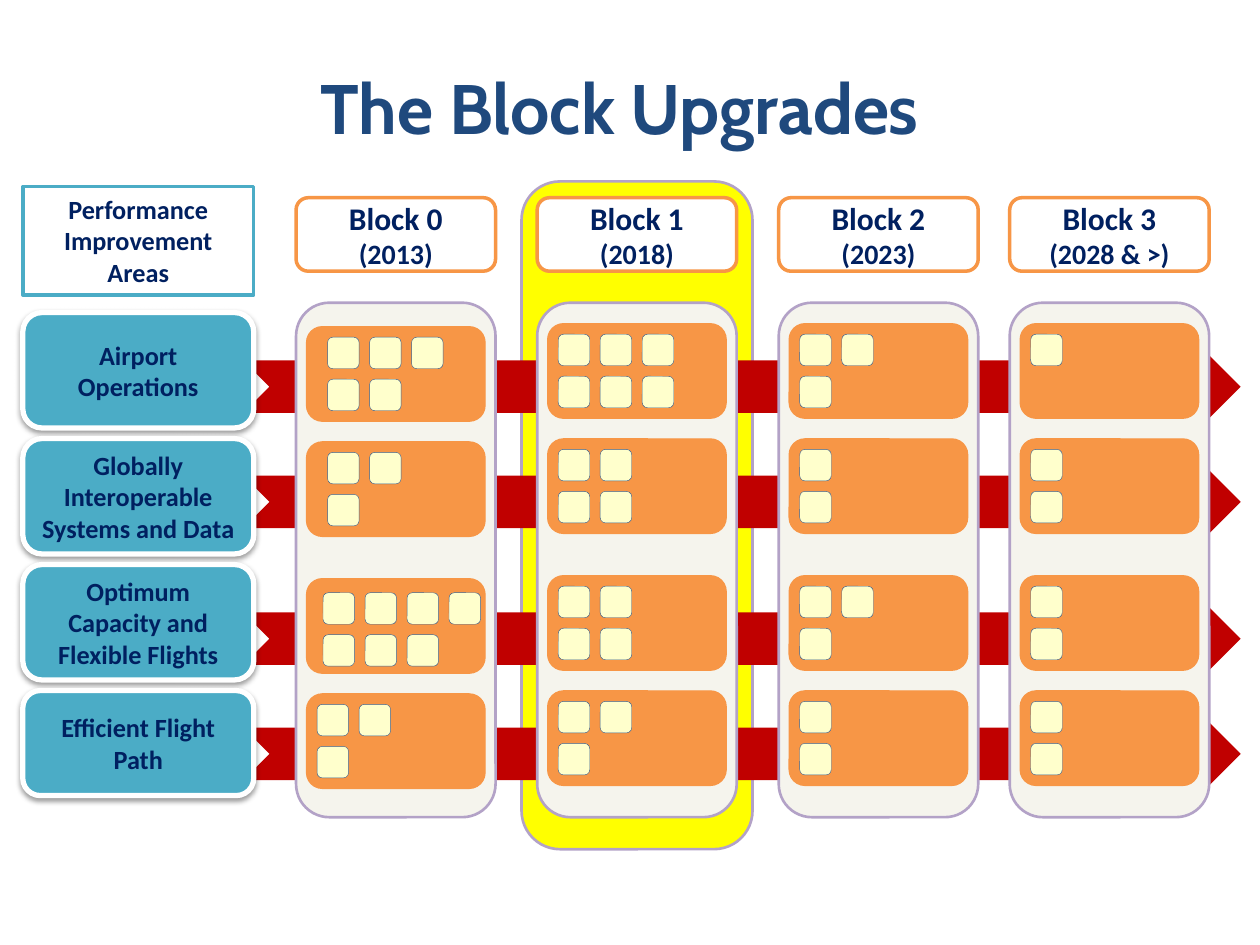
from lxml.etree import SubElement
from pptx import Presentation
from pptx.dml.color import RGBColor
from pptx.enum.shapes import MSO_SHAPE
from pptx.enum.text import MSO_ANCHOR, PP_ALIGN
from pptx.oxml.ns import qn
from pptx.util import Pt

TITLE = "The Block Upgrades"
AREAS_HEADING = "Performance Improvement Areas"
AREAS = [
    ("Airport Operations", 66),
    ("Globally Interoperable Systems and Data", 66),
    ("Optimum Capacity and Flexible Flights", 66),
    ("Efficient Flight Path", 60),
]
BLOCKS = [
    {"name": "Block 0", "year": "(2013)", "left": 169.2, "drop": 1.7,
     "modules": [(3, 2), (2, 1), (4, 3), (2, 1)],
     "insets": [(12, 6), (12, 6), (9.4, 8), (6, 6)]},
    {"name": "Block 1", "year": "(2018)", "left": 307, "drop": 0,
     "modules": [(3, 3), (2, 2), (2, 2), (2, 1)],
     "insets": [(6, 6)] * 4},
    {"name": "Block 2", "year": "(2023)", "left": 445, "drop": 0,
     "modules": [(2, 1), (1, 1), (2, 1), (1, 1)],
     "insets": [(6, 6)] * 4},
    {"name": "Block 3", "year": "(2028 & >)", "left": 577, "drop": 0,
     "modules": [(1, 0), (1, 1), (1, 1), (1, 1)],
     "insets": [(6, 6)] * 4},
]
BAND_TOPS = [185, 250.8, 329, 394.8]
BLOCK_WIDTH, BAND_INSET, MODULE_SIZE, MODULE_PITCH = 114, 6, 18, 24
AREA_LEFT, AREA_TOP, AREA_WIDTH, AREA_PITCH = 13, 178.6, 132, 72

NAVY, TEAL, ORANGE, LILAC, WHITE = "002060", "4BACC6", "F79646", "B3A2C7", "FFFFFF"


def rgb(color):
    return RGBColor.from_string(color)


def add_box(slide, kind, left, top, width, height, fill, line=None, weight=0):
    box = slide.shapes.add_shape(kind, Pt(left), Pt(top), Pt(width), Pt(height))
    box.shadow.inherit = False
    box.fill.solid()
    box.fill.fore_color.rgb = rgb(fill)
    if line:
        box.line.color.rgb = rgb(line)
        box.line.width = Pt(weight)
    else:
        box.line.fill.background()
    return box


def write(box, lines, color=NAVY, font="Calibri", anchor=MSO_ANCHOR.MIDDLE):
    frame = box.text_frame
    frame.word_wrap = True
    frame.vertical_anchor = anchor
    for index, (wording, size) in enumerate(lines):
        paragraph = frame.add_paragraph() if index else frame.paragraphs[0]
        paragraph.alignment = PP_ALIGN.CENTER
        run = paragraph.add_run()
        run.text = wording
        run.font.name = font
        run.font.size = Pt(size)
        run.font.bold = True
        run.font.color.rgb = rgb(color)


def add_shadow(box):
    effects = box._element.spPr.find(qn("a:effectLst"))
    shadow = SubElement(effects, qn("a:outerShdw"), blurRad=str(Pt(3.1)),
                        dist=str(Pt(1.6)), dir="5400000", rotWithShape="0")
    tint = SubElement(shadow, qn("a:srgbClr"), val="000000")
    SubElement(tint, qn("a:alpha"), val="38000")


def add_areas(slide):
    for index, (area, height) in enumerate(AREAS):
        label = add_box(slide, MSO_SHAPE.ROUNDED_RECTANGLE, AREA_LEFT,
                        AREA_TOP + index * AREA_PITCH, AREA_WIDTH, height, TEAL, WHITE, 3)
        add_shadow(label)
        write(label, [(area, 15)])
    heading = add_box(slide, MSO_SHAPE.RECTANGLE, AREA_LEFT, AREA_TOP - AREA_PITCH,
                      AREA_WIDTH, 62, WHITE, TEAL, 2)
    write(heading, [(AREAS_HEADING, 15)], anchor=MSO_ANCHOR.TOP)


def add_block(slide, block):
    rounded = MSO_SHAPE.ROUNDED_RECTANGLE
    left = block["left"]
    header = add_box(slide, rounded, left, 113, BLOCK_WIDTH, 42, WHITE, ORANGE, 2)
    write(header, [(block["name"], 18), (block["year"], 16)])
    add_box(slide, rounded, left, 173, BLOCK_WIDTH, 294, "F5F4ED", LILAC, 1.5)
    band_left = left + BAND_INSET
    for top, counts, (inset_x, inset_y) in zip(BAND_TOPS, block["modules"], block["insets"]):
        band_top = top + block["drop"]
        add_box(slide, rounded, band_left, band_top, BLOCK_WIDTH - 2 * BAND_INSET, 54,
                ORANGE, ORANGE, 0.75)
        for row, count in enumerate(counts):
            for column in range(count):
                add_box(slide, rounded, band_left + inset_x + column * MODULE_PITCH,
                        band_top + inset_y + row * MODULE_PITCH,
                        MODULE_SIZE, MODULE_SIZE, "FFFFCC", "3A5F8C", 0.25)


def main():
    deck = Presentation()
    deck.slide_width, deck.slide_height = Pt(720), Pt(540)
    slide = deck.slides.add_slide(deck.slide_layouts[6])
    title = slide.shapes.add_textbox(Pt(-12), Pt(16), Pt(732), Pt(90))
    write(title, [(TITLE, 40)], "1F497D", "Cabin")
    add_box(slide, MSO_SHAPE.ROUNDED_RECTANGLE, 298, 103.7, 132, 381.6, "FFFF00", LILAC, 1.5)
    for top in BAND_TOPS:
        add_box(slide, MSO_SHAPE.NOTCHED_RIGHT_ARROW, 139, top + 6, 570, 60, "C00000")
    add_areas(slide)
    for block in BLOCKS:
        add_block(slide, block)
    deck.save("out.pptx")


if __name__ == "__main__":
    main()
